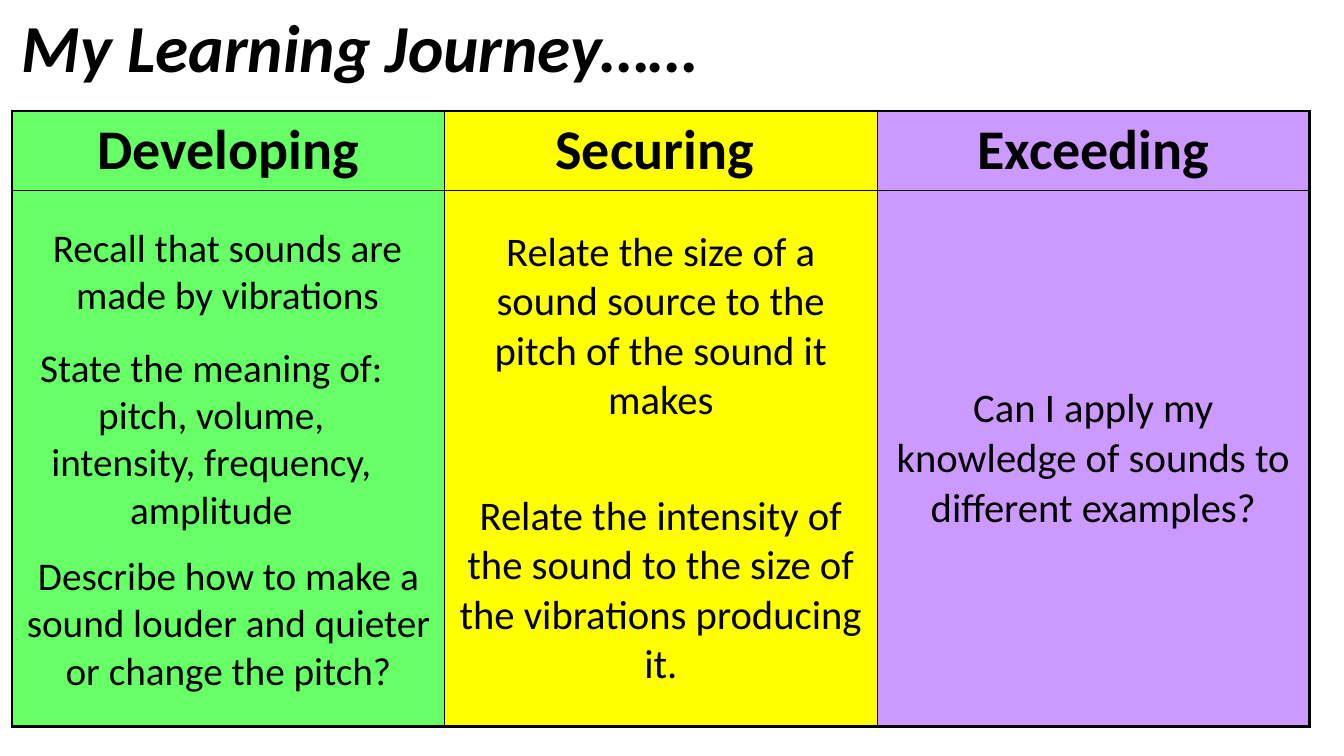
from lxml.etree import SubElement
from pptx import Presentation
from pptx.dml.color import RGBColor
from pptx.enum.text import MSO_ANCHOR, PP_ALIGN
from pptx.oxml.ns import qn
from pptx.util import Inches, Pt

COLORS = {"text": "000000", "line": "000000", "developing": "66FF66",
          "securing": "FFFF00", "exceeding": "CC99FF"}
COLUMNS = [
    ("Developing", "developing", 28,
     ["Describe how to make a sound louder and quieter or change the pitch?"]),
    ("Securing ", "securing", 29,
     ["Relate the size of a sound source to the pitch of the sound it makes",
      "Relate the intensity of the sound to the size of the vibrations producing it."]),
    ("Exceeding", "exceeding", 29,
     ["Can I apply my knowledge of sounds to different examples?"]),
]


class JourneySlide:
    """Draws the elements of a learning journey slide in one style."""

    font = "Calibri"
    thick, thin = 2.25, 1

    def __init__(self, prs):
        self.s = prs.slides.add_slide(prs.slide_layouts[6])

    def fill_text(self, tf, lines, size, bold=False, italic=False,
                  align=PP_ALIGN.CENTER, gap=0):
        tf.word_wrap = True
        for i, line in enumerate(lines):
            p = tf.add_paragraph() if i else tf.paragraphs[0]
            p.text = line
            p.alignment = align
            p.space_before = Pt(gap if i else 0)
            p.font.name = self.font
            p.font.size = Pt(size)
            p.font.bold = bold
            p.font.italic = italic
            p.font.color.rgb = RGBColor.from_string(COLORS["text"])

    def text(self, x, y, w, h, line, size, **style):
        sp = self.s.shapes.add_textbox(Inches(x), Inches(y), Inches(w), Inches(h))
        self.fill_text(sp.text_frame, [line], size, **style)

    def borders(self, cell, widths):
        tc_pr = cell._tc.get_or_add_tcPr()
        for i, (side, width) in enumerate(zip("LRTB", widths)):
            ln = tc_pr.makeelement(qn(f"a:ln{side}"), {"w": str(Pt(width))})
            fill = SubElement(ln, qn("a:solidFill"))
            SubElement(fill, qn("a:srgbClr"), val=COLORS["line"])
            tc_pr.insert(i, ln)

    def table(self, x, y, col_w, row_heights, columns):
        n_rows, n_cols = len(row_heights), len(columns)
        tbl = self.s.shapes.add_table(
            n_rows, n_cols, Inches(x), Inches(y),
            Inches(col_w * n_cols), Inches(sum(row_heights))).table
        for row, height in zip(tbl.rows, row_heights):
            row.height = Inches(height)
        for c, (heading, color, size, goals) in enumerate(columns):
            tbl.columns[c].width = Inches(col_w)
            self.fill_text(tbl.cell(0, c).text_frame, [heading], 40, bold=True)
            self.fill_text(tbl.cell(1, c).text_frame, goals, size, gap=47)
            for r in range(n_rows):
                cell = tbl.cell(r, c)
                cell.vertical_anchor = MSO_ANCHOR.MIDDLE
                cell.fill.solid()
                cell.fill.fore_color.rgb = RGBColor.from_string(COLORS[color])
                outer = (c == 0, c == n_cols - 1, r == 0, r == n_rows - 1)
                self.borders(cell, [self.thick if o else self.thin for o in outer])
        return tbl


def main():
    prs = Presentation()
    prs.slide_width, prs.slide_height = Inches(13.33), Inches(7.5)
    slide = JourneySlide(prs)
    slide.text(0.12, 0, 9.57, 1.85, "My Learning Journey……", 48,
               bold=True, italic=True, align=PP_ALIGN.LEFT)
    tbl = slide.table(0.12, 1.1, 4.29, [0.79, 5.32], COLUMNS)
    describe = tbl.cell(1, 0)
    describe.vertical_anchor = MSO_ANCHOR.BOTTOM
    describe.margin_bottom = Inches(0.3)
    slide.text(0.35, 2.17, 3.81, 1.45, "Recall that sounds are made by vibrations", 28)
    slide.text(0.19, 3.36, 3.81, 1.99,
               "State the meaning of: pitch, volume, intensity, frequency, amplitude", 28)
    prs.save("out.pptx")


if __name__ == "__main__":
    main()
